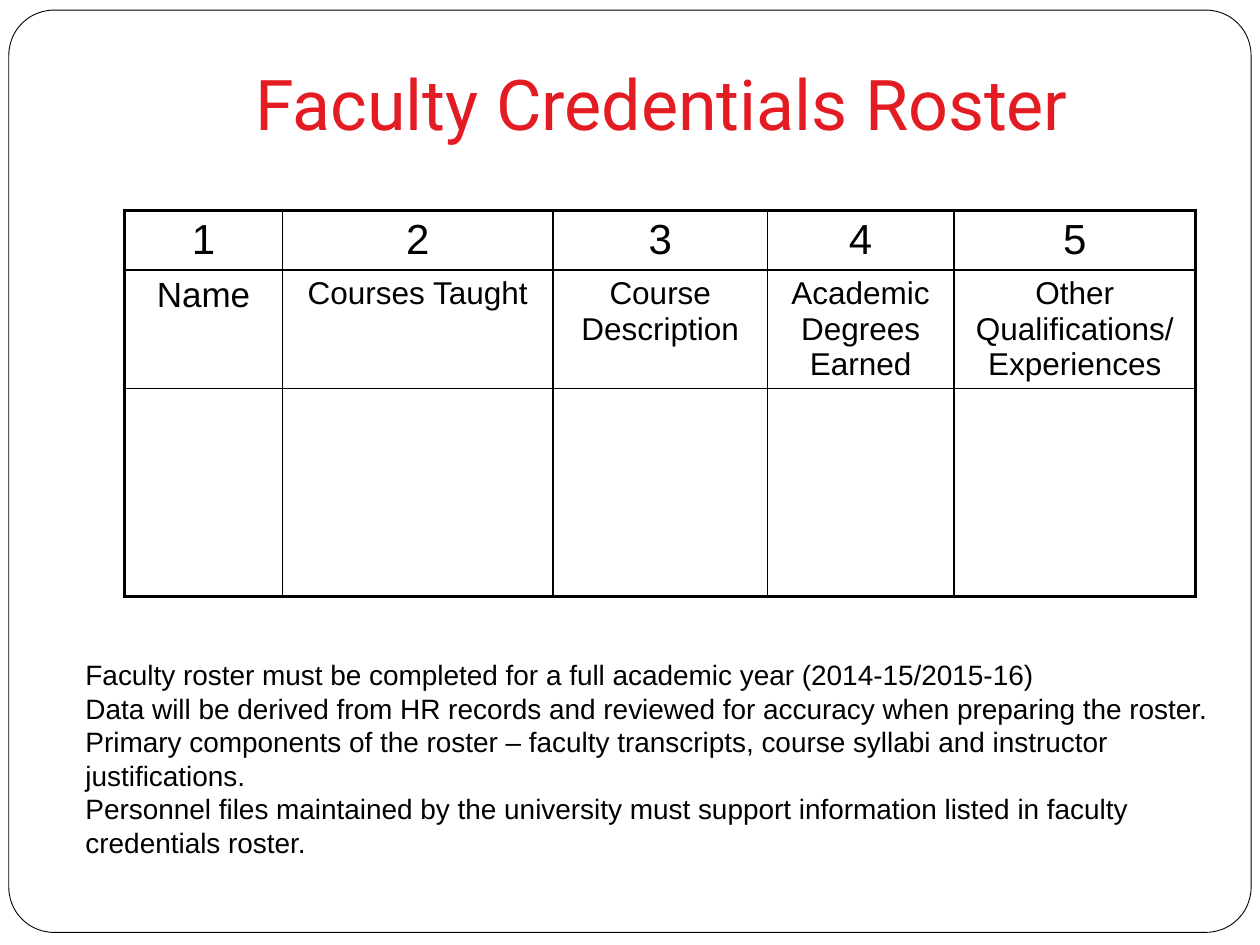
from lxml.etree import SubElement
from pptx import Presentation
from pptx.dml.color import RGBColor
from pptx.enum.shapes import MSO_SHAPE
from pptx.enum.text import MSO_ANCHOR, MSO_AUTO_SIZE, PP_ALIGN
from pptx.oxml.ns import qn
from pptx.util import Inches, Pt

COLORS = {"paper": "FFFFFF", "ink": "000000", "title": "E31B23"}
FRAME_BOX = (0.07, 0.08, 9.86, 7.32)
TITLE_BOX = (1, 0.3, 8.5, 0.95)
TABLE_BOX = (0.99, 1.67, 8.5, 3.06)
NOTES_BOX = (0.58, 5.17, 9.25, 1.72)
COLUMN_WIDTHS = (1.25, 2.15, 1.7, 1.48, 1.92)
ROW_HEIGHTS = (0.47, 0.94, 1.65)
HEADINGS = ("Name", "Courses Taught", "Course Description",
            "Academic Degrees Earned", "Other Qualifications/ Experiences")
NOTES = (
    "Faculty roster must be completed for a full academic year (2014-15/2015-16)",
    "Data will be derived from HR records and reviewed for accuracy when preparing the roster.",
    "Primary components of the roster – faculty transcripts, course syllabi and instructor justifications.",
    "Personnel files maintained by the university must support information listed in faculty credentials roster.",
)


def color(name):
    """Return a named colour."""
    return RGBColor.from_string(COLORS[name])


def inches(box):
    """Convert a box to lengths."""
    return [Inches(value) for value in box]


def style(para, size, align=PP_ALIGN.LEFT, face="Arial", shade="ink"):
    """Set the font and alignment of a paragraph."""
    para.alignment = align
    para.font.size = Pt(size)
    para.font.name = face
    para.font.color.rgb = color(shade)


def add_frame(page, box):
    """Place the rounded outline behind everything else."""
    frame = page.shapes.add_shape(MSO_SHAPE.ROUNDED_RECTANGLE, *inches(box))
    frame.adjustments[0] = 0.049
    frame.shadow.inherit = False
    frame.fill.solid()
    frame.fill.fore_color.rgb = color("paper")
    frame.line.color.rgb = color("ink")
    frame.line.width = Pt(0.5)
    page.shapes._spTree.insert(2, frame._element)


def add_title(page, box):
    """Fill and place the title placeholder."""
    title = page.shapes.title
    title.left, title.top, title.width, title.height = inches(box)
    text = title.text_frame
    text.text = "Faculty Credentials Roster"
    text.auto_size = MSO_AUTO_SIZE.NONE
    text.vertical_anchor = MSO_ANCHOR.BOTTOM
    text.margin_bottom = Inches(0.1)
    style(text.paragraphs[0], 40, PP_ALIGN.CENTER, "Roboto", "title")


def set_borders(cell, outer_sides):
    """Draw cell borders, heavier on the outer sides of the table."""
    properties = cell._tc.get_or_add_tcPr()
    for index, side in enumerate("LRTB"):
        width = Pt(2.25 if side in outer_sides else 1)
        line = SubElement(properties, qn(f"a:ln{side}"), w=str(width))
        fill = SubElement(line, qn("a:solidFill"))
        SubElement(fill, qn("a:srgbClr"), val=COLORS["ink"])
        properties.insert(index, line)


def add_roster(page, box):
    """Build the roster table with numbers, headings and an empty row."""
    row_count, column_count = len(ROW_HEIGHTS), len(COLUMN_WIDTHS)
    table = page.shapes.add_table(row_count, column_count, *inches(box)).table
    table.first_row = table.horz_banding = False
    for column, width in zip(table.columns, COLUMN_WIDTHS):
        column.width = Inches(width)
    for row, height in zip(table.rows, ROW_HEIGHTS):
        row.height = Inches(height)
    numbers = [str(index + 1) for index in range(column_count)]
    texts = (numbers, HEADINGS, [""] * column_count)
    for row in range(row_count):
        for column in range(column_count):
            cell = table.cell(row, column)
            cell.text = texts[row][column]
            cell.fill.background()
            size = 24 if row == 0 else 20 if column == 0 else 18
            style(cell.text_frame.paragraphs[0], size, PP_ALIGN.CENTER)
            edges = {"L": column == 0, "R": column == column_count - 1,
                     "T": row == 0, "B": row == row_count - 1}
            set_borders(cell, [side for side, outer in edges.items() if outer])


def add_notes(page, box):
    """Write the remarks below the table."""
    text = page.shapes.add_textbox(*inches(box)).text_frame
    text.word_wrap = True
    text.auto_size = MSO_AUTO_SIZE.SHAPE_TO_FIT_TEXT
    text.text = "\n".join(NOTES)
    for para in text.paragraphs:
        style(para, 16)


def main():
    """Build and save the deck."""
    deck = Presentation()
    deck.slide_width, deck.slide_height = Inches(10), Inches(7.5)
    page = deck.slides.add_slide(deck.slide_layouts[5])
    add_frame(page, FRAME_BOX)
    add_title(page, TITLE_BOX)
    add_roster(page, TABLE_BOX)
    add_notes(page, NOTES_BOX)
    deck.save("out.pptx")


if __name__ == "__main__":
    main()
